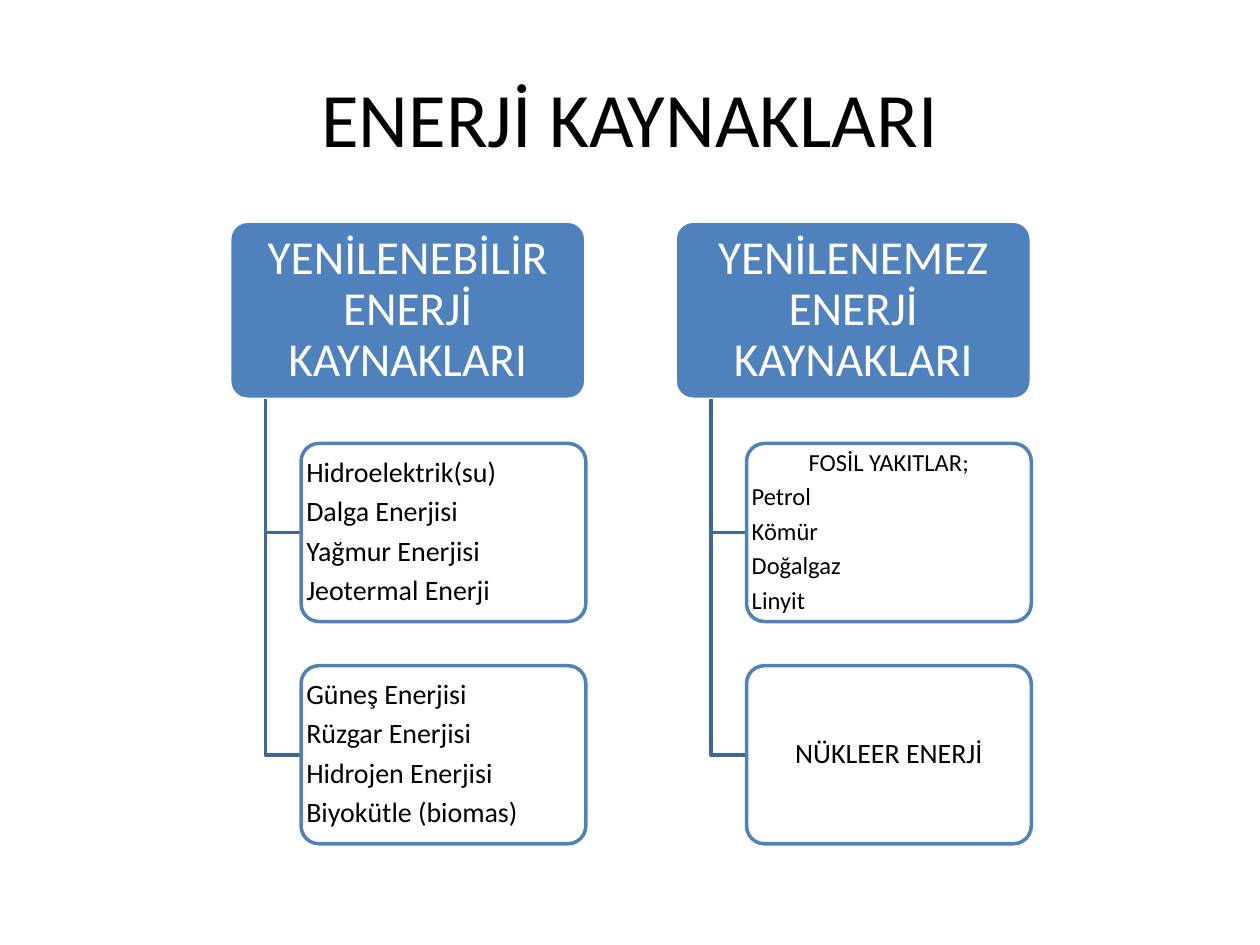
import pptx
import pptx.dml.color
import pptx.enum.shapes
import pptx.enum.text
import pptx.oxml
import pptx.util

Cm = pptx.util.Cm
Pt = pptx.util.Pt
ALIGN = pptx.enum.text.PP_ALIGN
BLUE, DARK_BLUE, WHITE, BLACK = "4F81BD", "3F6797", "FFFFFF", "000000"
BOX_HEIGHT, ROW_PITCH = 3.59, 4.48
HEADER_WIDTH, COLUMN_PITCH = 7.18, 8.98
TRUNK_INDENT, CHILD_INDENT = 0.72, 1.44

COLUMNS = [
    ("YENİLENEBİLİR ENERJİ KAYNAKLARI", [
        (16, ["Hidroelektrik(su)", "Dalga Enerjisi", "Yağmur Enerjisi", "Jeotermal Enerji"], False),
        (16, ["Güneş Enerjisi", "Rüzgar Enerjisi", "Hidrojen Enerjisi", "Biyokütle (biomas)"], False),
    ]),
    ("YENİLENEMEZ ENERJİ KAYNAKLARI", [
        (14, ["FOSİL YAKITLAR;", "Petrol", "Kömür", "Doğalgaz", "Linyit"], True),
        (16, ["NÜKLEER ENERJİ"], True),
    ]),
]


def rgb(value):
    """Return the colour for a hex string."""
    return pptx.dml.color.RGBColor.from_string(value)


def set_values(target, values):
    """Set each attribute named in a dict of format values."""
    for name, value in values.items():
        setattr(target, name, value)


def write_text(shape, lines, size, color, centred_count, spacing=0.9):
    """Fill a shape with paragraphs, the first few of them centred."""
    frame = shape.text_frame
    set_values(frame, {
        "word_wrap": True,
        "vertical_anchor": pptx.enum.text.MSO_ANCHOR.MIDDLE,
        "margin_left": 0, "margin_right": 0, "margin_top": 0, "margin_bottom": 0,
    })
    for index, line in enumerate(lines):
        paragraph = frame.paragraphs[0] if index == 0 else frame.add_paragraph()
        is_last = index == len(lines) - 1
        set_values(paragraph, {
            "alignment": ALIGN.CENTER if index < centred_count else ALIGN.LEFT,
            "line_spacing": spacing,
            "space_after": Pt(0 if is_last else round(size * 0.33, 1)),
        })
        run = paragraph.add_run()
        run.text = line
        set_values(run.font, {"name": "Calibri", "size": Pt(size)})
        run.font.color.rgb = rgb(color)


def add_title(slide, left, top, width, height):
    """Place the centred slide title in the given box."""
    title = slide.shapes.add_textbox(Cm(left), Cm(top), Cm(width), Cm(height))
    write_text(title, ["ENERJİ KAYNAKLARI"], 44, BLACK, 1, 1.0)


def add_box(slide, left, top, width, fill, line):
    """Place a rounded box with an outline and return it."""
    shape = slide.shapes.add_shape(
        pptx.enum.shapes.MSO_SHAPE.ROUNDED_RECTANGLE,
        Cm(left), Cm(top), Cm(width), Cm(BOX_HEIGHT))
    shape.adjustments[0] = 0.1
    shape.shadow.inherit = False
    shape.fill.solid()
    shape.fill.fore_color.rgb = rgb(fill)
    shape.line.color.rgb = rgb(line)
    shape.line.width = Pt(2)
    return shape


def set_opacity(shape, percent):
    """Make the solid fill of a shape partly transparent."""
    color = shape.fill._xPr.find(".//" + pptx.oxml.ns.qn("a:srgbClr"))
    alpha = pptx.oxml.xmlchemy.OxmlElement("a:alpha")
    alpha.set("val", str(percent * 1000))
    color.append(alpha)


def add_branch(slide, left, top, right, bottom):
    """Draw an open elbow going down and then right."""
    builder = slide.shapes.build_freeform(Cm(left), Cm(top))
    builder.add_line_segments([(Cm(left), Cm(bottom)), (Cm(right), Cm(bottom))], close=False)
    branch = builder.convert_to_shape()
    branch.shadow.inherit = False
    branch.fill.background()
    branch.line.color.rgb = rgb(DARK_BLUE)
    branch.line.width = Pt(2)


def add_column(slide, left, top, heading, children):
    """Place a heading box with its child boxes hanging below it."""
    header = add_box(slide, left, top, HEADER_WIDTH, BLUE, WHITE)
    write_text(header, [heading], 27, WHITE, 1)
    child_left = left + CHILD_INDENT
    for row, (size, lines, centred) in enumerate(children, start=1):
        child_top = top + row * ROW_PITCH
        add_branch(slide, left + TRUNK_INDENT, top + BOX_HEIGHT,
                   child_left, child_top + BOX_HEIGHT / 2)
        child = add_box(slide, child_left, child_top, HEADER_WIDTH - CHILD_INDENT, WHITE, BLUE)
        set_opacity(child, 90)
        write_text(child, lines, size, BLACK, int(centred))


def main():
    """Build the slide and save it."""
    presentation = pptx.Presentation()
    set_values(presentation, {"slide_width": Cm(25.4), "slide_height": Cm(19.05)})
    slide = presentation.slides.add_slide(presentation.slide_layouts[6])
    add_title(slide, 1.27, 0.76, 22.86, 3.18)
    for index, (heading, children) in enumerate(COLUMNS):
        add_column(slide, 4.63 + index * COLUMN_PITCH, 4.46, heading, children)
    presentation.save("out.pptx")


if __name__ == "__main__":
    main()
